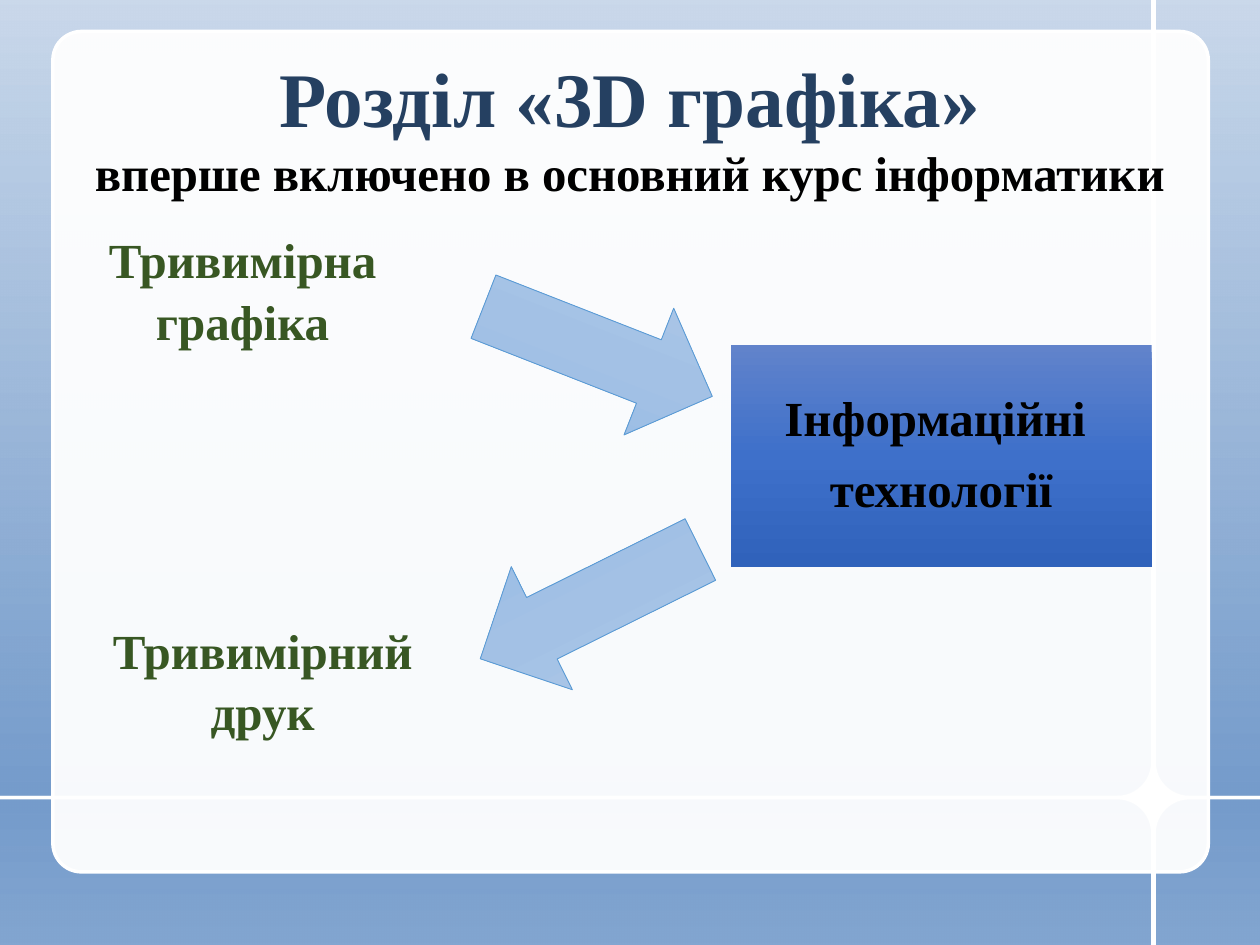
from itertools import product

from lxml import etree
from pptx import Presentation
from pptx.dml.color import RGBColor
from pptx.enum.shapes import MSO_SHAPE as Shape
from pptx.enum.text import MSO_ANCHOR as Anchor, PP_ALIGN as Align
from pptx.oxml import parse_xml
from pptx.oxml.ns import nsdecls, qn
from pptx.util import Inches, Pt

WIDTH, HEIGHT = 10, 7.5
FONT = "Times New Roman"
WHITE, BLACK, NAVY, GREEN = "FFFFFF", "000000", "254061", "385723"
TILE_STOPS = [(0, "DCE6F2", 100), (100, "6691C6", 90)]
ARROW_STOPS = [(0, "B1CBE9", 100), (50, "A3C1E5", 100), (100, "93B9E4", 100)]
BOX_STOPS = [(0, "6183CB", 100), (50, "3E70CA", 100), (100, "3062BB", 100)]


def color(value):
    return RGBColor.from_string(value)


def set_gradient(shape, stops, angle=90):
    """Linear gradient from (position %, colour, opacity %) stops."""
    stop_xml = "".join(
        f'<a:gs pos="{position * 1000}"><a:srgbClr val="{value}">'
        f'<a:alpha val="{opacity * 1000}"/></a:srgbClr></a:gs>'
        for position, value, opacity in stops)
    gradient = parse_xml(
        f'<a:gradFill {nsdecls("a")} rotWithShape="1"><a:gsLst>{stop_xml}</a:gsLst>'
        f'<a:lin ang="{angle * 60000}" scaled="0"/></a:gradFill>')
    geometry = shape._element.spPr.find(qn("a:prstGeom"))
    geometry.addnext(gradient)


def add_block(slide, kind, box, line=None, line_width=2, radius=None):
    shape = slide.shapes.add_shape(kind, *map(Inches, box))
    shape.shadow.inherit = False
    if radius is not None:
        shape.adjustments[0] = radius
    if line:
        shape.line.color.rgb = color(line)
        shape.line.width = Pt(line_width)
    else:
        shape.line.fill.background()
    return shape


def add_text_box(slide, box):
    frame = slide.shapes.add_textbox(*map(Inches, box)).text_frame
    frame.word_wrap = True
    return frame


def style_font(font, size, value):
    font.name, font.size, font.bold = FONT, Pt(size), True
    font.color.rgb = color(value)


def write_lines(frame, lines, value, line_spacing, space_after=0):
    for index, line in enumerate(lines):
        paragraph = frame.add_paragraph() if index else frame.paragraphs[0]
        paragraph.text = line
        paragraph.alignment = Align.CENTER
        paragraph.line_spacing = line_spacing
        paragraph.space_after = Pt(space_after)
        style_font(paragraph.font, 28, value)


def add_background(slide):
    # Four tiles bleed past the slide; their gaps form the white cross
    width, height = 9.43, 7.58
    rows = [(-1.25, 90), (6.33, 270)]
    for left, (top, angle) in product([-0.28, 9.16], rows):
        tile = add_block(slide, Shape.ROUNDED_RECTANGLE,
                         (left, top, width, height), WHITE, radius=0.037)
        set_gradient(tile, TILE_STOPS, angle)

    # Translucent content panel
    panel = add_block(slide, Shape.ROUNDED_RECTANGLE,
                      (0.42, 0.25, 9.17, 6.67), WHITE, radius=0.034)
    panel.fill.solid()
    panel.fill.fore_color.rgb = color(WHITE)
    fill_color = panel._element.spPr.find(qn("a:solidFill"))[0]
    etree.SubElement(fill_color, qn("a:alpha"), val="95000")


def add_title(slide, title, subtitle):
    frame = add_text_box(slide, (0.05 * WIDTH, 0.04 * HEIGHT, 0.9 * WIDTH, 1.25))
    frame.margin_top = Inches(0.1)
    paragraph = frame.paragraphs[0]
    paragraph.alignment = Align.CENTER
    heading = paragraph.add_run()
    heading.text = title
    style_font(heading.font, 44.1, NAVY)
    paragraph.add_line_break()
    detail = paragraph.add_run()
    detail.text = subtitle
    style_font(detail.font, 27.9, BLACK)


def add_topic(slide, box, lines):
    write_lines(add_text_box(slide, box), lines, GREEN, 1.05)


def add_arrow(slide, box, rotation):
    arrow = add_block(slide, Shape.RIGHT_ARROW, box, "5B9BD5", 0.5)
    arrow.rotation = rotation
    set_gradient(arrow, ARROW_STOPS)


def add_technology_box(slide, box, lines):
    shape = add_block(slide, Shape.RECTANGLE, box)
    set_gradient(shape, BOX_STOPS)
    frame = shape.text_frame
    frame.word_wrap = True
    frame.vertical_anchor = Anchor.MIDDLE
    frame.margin_left = frame.margin_right = Inches(0.08)
    frame.margin_top = frame.margin_bottom = Inches(0.08)
    write_lines(frame, lines, BLACK, 0.9, space_after=10)


def main():
    presentation = Presentation()
    presentation.slide_width = Inches(WIDTH)
    presentation.slide_height = Inches(HEIGHT)
    slide = presentation.slides.add_slide(presentation.slide_layouts[6])

    add_background(slide)
    add_title(slide, "Розділ «3D графіка»",
              "вперше включено в основний курс інформатики")

    # Topics on the left, linked by arrows to the box on the right
    add_topic(slide, (0.5, 1.75, 2.85, 1.04), ["Тривимірна", "графіка"])
    add_arrow(slide, (3.77, 2.25, 1.95, 1.08), 21.4)
    add_arrow(slide, (3.71, 4.25, 1.95, 1.09), 153.6)
    add_topic(slide, (0.51, 4.85, 3.15, 1.04), ["Тривимірний", "друк"])
    add_technology_box(slide, (5.8, 2.74, 3.34, 1.76),
                       ["Інформаційні ", "технології"])

    presentation.save("out.pptx")


if __name__ == "__main__":
    main()
